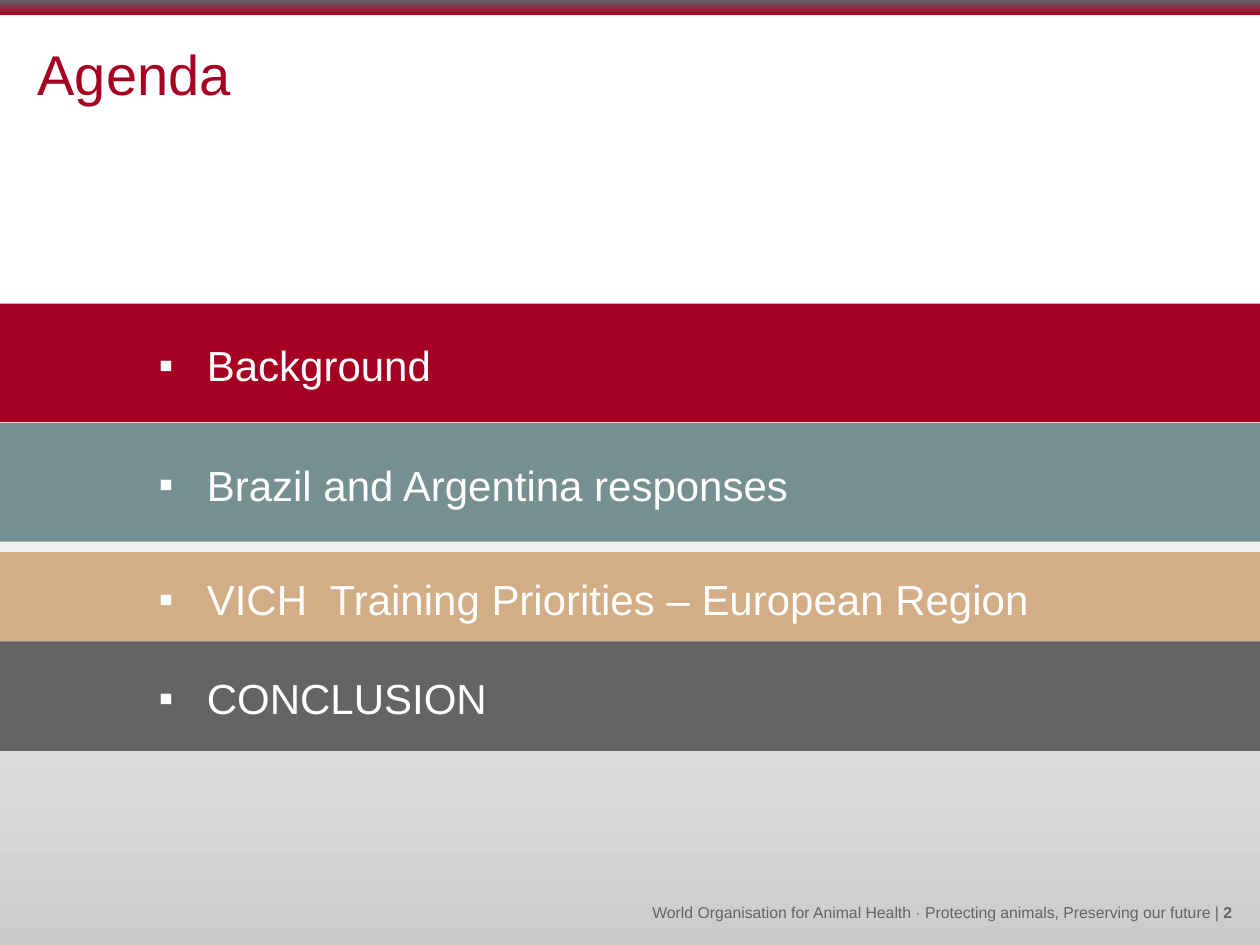
from lxml import etree
from pptx import Presentation
from pptx import util as u
from pptx.dml.color import RGBColor
from pptx.enum import shapes, text
from pptx.oxml.ns import qn

RED, GREY, WHITE = "A50021", "636463", "FFFFFF"
PAGE_WIDTH, PAGE_HEIGHT = 25.4, 19.05

# Top, height (cm), colour and wording of each agenda band
BANDS = [
    (6.12, 2.39, RED, "Background"),
    (8.53, 2.39, "769091", "Brazil and Argentina responses"),
    (11.13, 1.8, "D2AD86", "VICH  Training Priorities – European Region"),
    (12.93, 2.21, GREY, "CONCLUSION"),
]


def colour(value):
    return RGBColor.from_string(value)


def apply(target, values):
    for name, value in values.items():
        setattr(target, name, value)


def place(shape, box):
    sides = ("left", "top", "width", "height")
    apply(shape, dict(zip(sides, map(u.Cm, box))))


def fill_gradient(fill, stops):
    """Fill upwards from the first stop to the second."""
    fill.gradient()
    fill.gradient_angle = 90
    for stop, (position, value) in zip(fill.gradient_stops, stops):
        stop.position = position
        stop.color.rgb = colour(value)


def format_frame(frame, anchor, left=0, top=0):
    apply(frame, {
        "word_wrap": True,
        "auto_size": text.MSO_AUTO_SIZE.NONE,
        "vertical_anchor": anchor,
        "margin_left": u.Cm(left),
        "margin_top": u.Cm(top),
        "margin_right": 0,
        "margin_bottom": 0,
    })


def write(para, wording, size, value, bold=False):
    span = para.add_run()
    span.text = wording
    apply(span.font, {"name": "Arial", "size": u.Pt(size), "bold": bold})
    span.font.color.rgb = colour(value)


def add_bullet(para, value, indent):
    properties = para._p.get_or_add_pPr()
    properties.set("marL", str(u.Cm(indent)))
    properties.set("indent", str(-u.Cm(indent)))
    bullet_colour = etree.SubElement(properties, qn("a:buClr"))
    etree.SubElement(bullet_colour, qn("a:srgbClr"), val=value)
    etree.SubElement(properties, qn("a:buFont"), typeface="Arial")
    etree.SubElement(properties, qn("a:buChar"), char="▪")


def add_rectangle(page, box):
    shape = page.shapes.add_shape(
        shapes.MSO_SHAPE.RECTANGLE, *map(u.Cm, box))
    shape.shadow.inherit = False
    shape.line.fill.background()
    return shape


def add_top_bar(page, box):
    bar = add_rectangle(page, box)
    fill_gradient(bar.fill, [(0, RED), (1, GREY)])


def add_title(page, box, wording):
    title = page.shapes.title
    place(title, box)
    format_frame(title.text_frame, text.MSO_ANCHOR.TOP, left=0.25, top=0.13)
    para = title.text_frame.paragraphs[0]
    para.alignment = text.PP_ALIGN.LEFT
    write(para, wording, 32, RED)


def add_band(page, box, value, wording):
    band = add_rectangle(page, box)
    band.fill.solid()
    band.fill.fore_color.rgb = colour(value)
    format_frame(band.text_frame, text.MSO_ANCHOR.MIDDLE, left=3.2, top=0.08)
    para = band.text_frame.paragraphs[0]
    para.alignment = text.PP_ALIGN.LEFT
    add_bullet(para, WHITE, 0.97)
    write(para, wording, 24, WHITE)


def add_footer(page, box, wording, number):
    footer = page.shapes.add_textbox(*map(u.Cm, box))
    format_frame(footer.text_frame, text.MSO_ANCHOR.MIDDLE)
    para = footer.text_frame.paragraphs[0]
    apply(para, {"alignment": text.PP_ALIGN.RIGHT, "line_spacing": 1.2})
    write(para, wording, 9, GREY)
    write(para, number, 9, GREY, bold=True)


def build_agenda(deck):
    page = deck.slides.add_slide(deck.slide_layouts.get_by_name("Title Only"))
    fill_gradient(page.background.fill, [(0, "CCCCCC"), (0.6, WHITE)])
    add_top_bar(page, (0, 0, PAGE_WIDTH, 0.3))
    add_title(page, (0.51, 0.66, 23.6, 1.37), "Agenda")
    for top, height, value, wording in BANDS:
        add_band(page, (0, top, PAGE_WIDTH, height), value, wording)
    add_footer(
        page, (6.48, 17.96, 18.36, 0.79),
        "World Organisation for Animal Health · "
        "Protecting animals, Preserving our future | ", "2")


def main():
    deck = Presentation()
    apply(deck, {"slide_width": u.Cm(PAGE_WIDTH),
                 "slide_height": u.Cm(PAGE_HEIGHT)})
    build_agenda(deck)
    deck.save("out.pptx")


if __name__ == "__main__":
    main()
